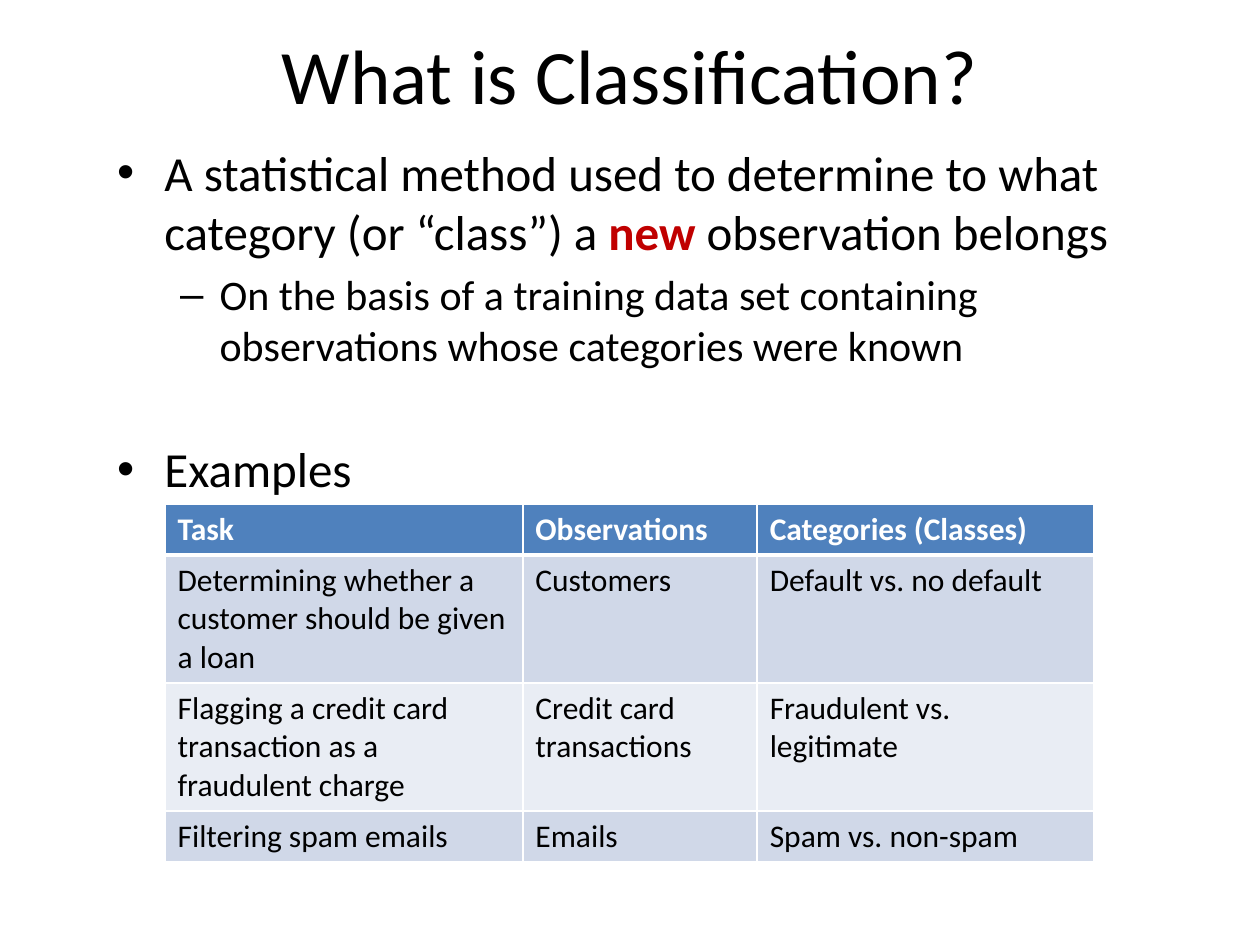
"""Build a slide that defines classification and lists examples in a table."""
from lxml.etree import SubElement
from pptx import Presentation
from pptx.dml.color import RGBColor
from pptx.enum.text import MSO_ANCHOR, MSO_AUTO_SIZE, PP_ALIGN
from pptx.oxml.ns import qn
from pptx.util import Inches, Pt

THEME = {
    "font": "Calibri", "text": "000000", "accent": "C00000", "white": "FFFFFF",
    "header": "4F81BD", "bands": ("D0D8E8", "E9EDF4"),
    "title": 44, "body": 28, "sub": 24, "cell": 18,
}


def add_run(p, text, size="body", color="text", bold=False):
    r = p.add_run()
    r.text = text
    r.font.name = THEME["font"]
    r.font.size = Pt(THEME[size])
    r.font.bold = bold
    r.font.color.rgb = RGBColor.from_string(THEME[color])


def add_border(cell, side, width):
    ln = SubElement(cell._tc.get_or_add_tcPr(), qn(f"a:ln{side}"), w=str(Pt(width)))
    SubElement(SubElement(ln, qn("a:solidFill")), qn("a:srgbClr"), val=THEME["white"])


prs = Presentation()
prs.slide_width, prs.slide_height = Inches(10), Inches(7.5)
W, H = prs.slide_width, prs.slide_height
s = prs.slides.add_slide(prs.slide_layouts[1])
title, body = s.placeholders

title.left, title.top, title.width, title.height = int(W * 0.05), 0, int(W * 0.9), Inches(1.17)
tf = title.text_frame
tf.auto_size = MSO_AUTO_SIZE.NONE
tf.vertical_anchor = MSO_ANCHOR.MIDDLE
p = tf.paragraphs[0]
p.alignment = PP_ALIGN.CENTER
add_run(p, "What is Classification?", size="title")

body.left, body.top, body.width, body.height = Inches(0.83), Inches(1.08), int(W * 0.85), Inches(6.42)
tf = body.text_frame
tf.auto_size = MSO_AUTO_SIZE.NONE
p = tf.paragraphs[0]
p.space_before = Pt(0)
add_run(p, "A statistical method used to determine to what category (or “class”) a ")
add_run(p, "new", color="accent", bold=True)
add_run(p, " observation belongs")
for text, level, size, gap in [
    ("On the basis of a training data set containing observations whose categories were known",
     1, "sub", 5),
    ("Examples", 0, "body", 39.5),
]:
    p = tf.add_paragraph()
    p.level = level
    p.space_before = Pt(gap)
    add_run(p, text, size=size)

rows = [
    ("Task", "Observations", "Categories (Classes)"),
    ("Determining whether a customer should be given a loan", "Customers", "Default vs. no default"),
    ("Flagging a credit card transaction as a fraudulent charge", "Credit card transactions",
     "Fraudulent vs. legitimate"),
    ("Filtering spam emails", "Emails", "Spam vs. non-spam"),
]
col_widths = (2.84, 1.86, 2.67)
row_heights = (0.4, 1.01, 1.01, 0.4)
table = s.shapes.add_table(len(rows), len(col_widths), Inches(1.31), Inches(4),
                           Inches(sum(col_widths)), Inches(sum(row_heights))).table
for col, width in zip(table.columns, col_widths):
    col.width = Inches(width)
for i, (row, height) in enumerate(zip(rows, row_heights)):
    table.rows[i].height = Inches(height)
    is_header = i == 0
    fill = THEME["header"] if is_header else THEME["bands"][(i - 1) % 2]
    for j, text in enumerate(row):
        cell = table.cell(i, j)
        for side in "LRTB":
            heavy = (i, side) in ((0, "B"), (1, "T"))
            add_border(cell, side, 3 if heavy else 1)
        cell.fill.solid()
        cell.fill.fore_color.rgb = RGBColor.from_string(fill)
        add_run(cell.text_frame.paragraphs[0], text, size="cell",
                color="white" if is_header else "text", bold=is_header)

prs.save("out.pptx")
